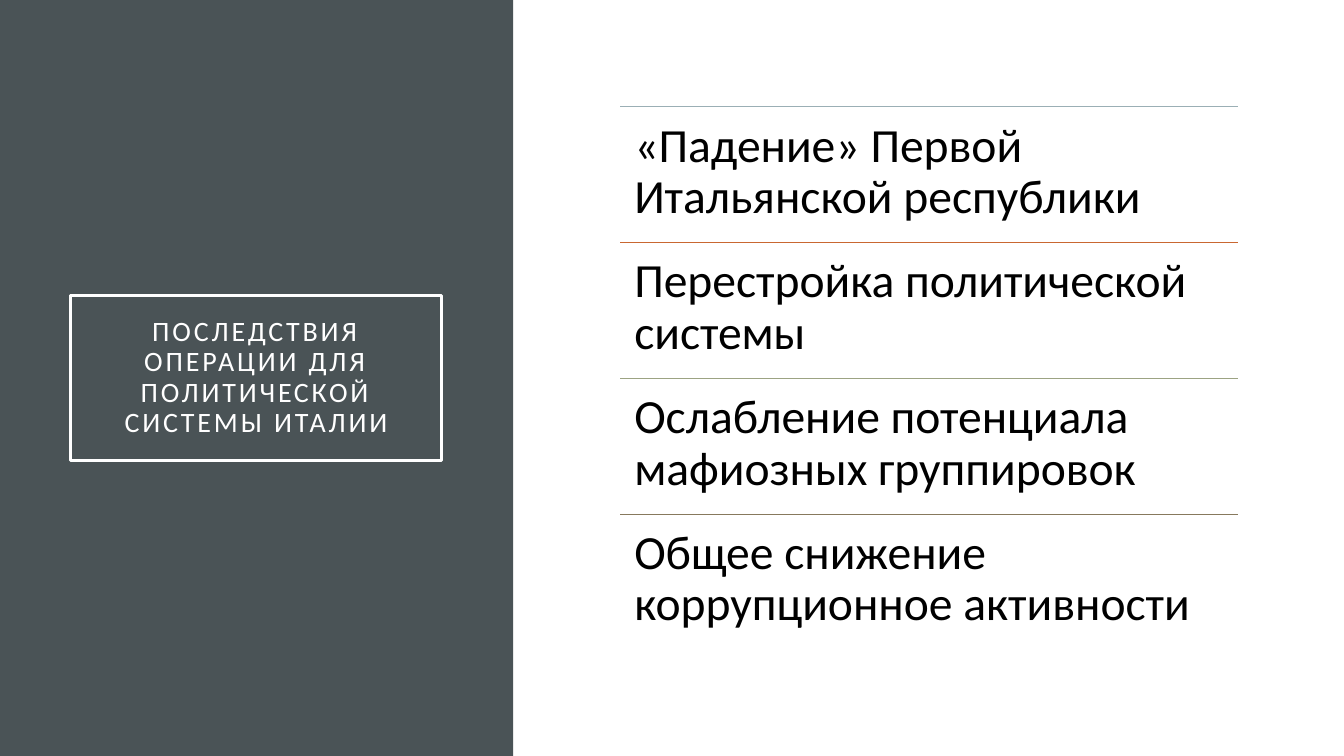
from pptx import Presentation
from pptx.dml.color import RGBColor
from pptx.enum.shapes import MSO_CONNECTOR, MSO_SHAPE
from pptx.enum.text import MSO_ANCHOR, PP_ALIGN
from pptx.oxml.ns import qn
from pptx.util import Inches, Pt
from lxml import etree

RECTANGLE = MSO_SHAPE.RECTANGLE
STRAIGHT = MSO_CONNECTOR.STRAIGHT
TOP, MIDDLE = MSO_ANCHOR.TOP, MSO_ANCHOR.MIDDLE
LEFT, CENTER = PP_ALIGN.LEFT, PP_ALIGN.CENTER

COLORS = {
    "panel": "4A5356",
    "white": "FFFFFF",
    "black": "000000",
    "blue": "9BAFB5",
    "orange": "C96731",
    "olive": "9CA383",
    "brown": "87795D",
}
FONT = "Calibri"

TITLE = "ПОСЛЕДСТВИЯ ОПЕРАЦИИ ДЛЯ ПОЛИТИЧЕСКОЙ СИСТЕМЫ ИТАЛИИ"
CONSEQUENCES = [
    ("«Падение» Первой Итальянской республики", "blue"),
    ("Перестройка политической системы", "orange"),
    ("Ослабление потенциала мафиозных группировок", "olive"),
    ("Общее снижение коррупционное активности", "brown"),
]

# List area, in percent of the slide
LIST_LEFT, LIST_TOP = 46.14, 14.13
LIST_WIDTH, ROW_HEIGHT = 45.99, 17.96


def color(name):
    return RGBColor.from_string(COLORS[name])


def write_text(shape, text, size, fill, inset, align=LEFT, anchor=TOP, spacing=0):
    frame = shape.text_frame
    frame.word_wrap = True
    frame.vertical_anchor = anchor
    frame.margin_left = frame.margin_right = Inches(inset)
    frame.margin_top = frame.margin_bottom = Inches(inset)
    paragraph = frame.paragraphs[0]
    paragraph.alignment = align
    paragraph.line_spacing = 0.9
    run = paragraph.add_run()
    run.text = text
    run.font.name = FONT
    run.font.size = Pt(size)
    run.font.color.rgb = color(fill)
    if spacing:
        run.font._element.set("spc", str(spacing * 100))


class SlideBuilder:
    """Places elements by percent of the slide's width and height."""

    def __init__(self, presentation):
        self.width = presentation.slide_width
        self.height = presentation.slide_height
        self.slide = presentation.slides.add_slide(presentation.slide_layouts[6])

    def place(self, left, top, width, height):
        return (
            round(self.width * left / 100),
            round(self.height * top / 100),
            round(self.width * width / 100),
            round(self.height * height / 100),
        )

    def rectangle(self, *box, fill=None, line=None, weight=1):
        shape = self.slide.shapes.add_shape(RECTANGLE, *self.place(*box))
        shape.shadow.inherit = False
        if fill:
            shape.fill.solid()
            shape.fill.fore_color.rgb = color(fill)
        else:
            shape.fill.background()
        if line:
            shape.line.color.rgb = color(line)
            shape.line.width = Pt(weight)
        else:
            shape.line.fill.background()
        return shape

    def rule(self, left, top, width, line):
        x, y, length, _ = self.place(left, top, width, 0)
        connector = self.slide.shapes.add_connector(STRAIGHT, x, y, x + length, y)
        connector.line.color.rgb = color(line)
        connector.line.width = Pt(0.5)
        etree.SubElement(connector._element.spPr, qn("a:effectLst"))

    def text(self, *box, text, **style):
        write_text(self.slide.shapes.add_textbox(*self.place(*box)), text, **style)


def main():
    presentation = Presentation()
    presentation.slide_width = Inches(13.33)
    presentation.slide_height = Inches(7.5)
    builder = SlideBuilder(presentation)

    # Side panel with the framed title
    builder.rectangle(0, 0, 38.18, 100, fill="panel")
    title = builder.rectangle(5.25, 39.07, 27.61, 21.87, line="white", weight=2.5)
    write_text(title, TITLE, size=20, fill="white", inset=0.2,
               align=CENTER, anchor=MIDDLE, spacing=2)

    # Consequences, each under its own coloured rule
    for row, (consequence, line) in enumerate(CONSEQUENCES):
        top = LIST_TOP + row * ROW_HEIGHT
        builder.rule(LIST_LEFT, top, LIST_WIDTH, line)
        builder.text(LIST_LEFT, top, LIST_WIDTH, ROW_HEIGHT,
                     text=consequence, size=34, fill="black", inset=0.14)

    presentation.save("out.pptx")


if __name__ == "__main__":
    main()
